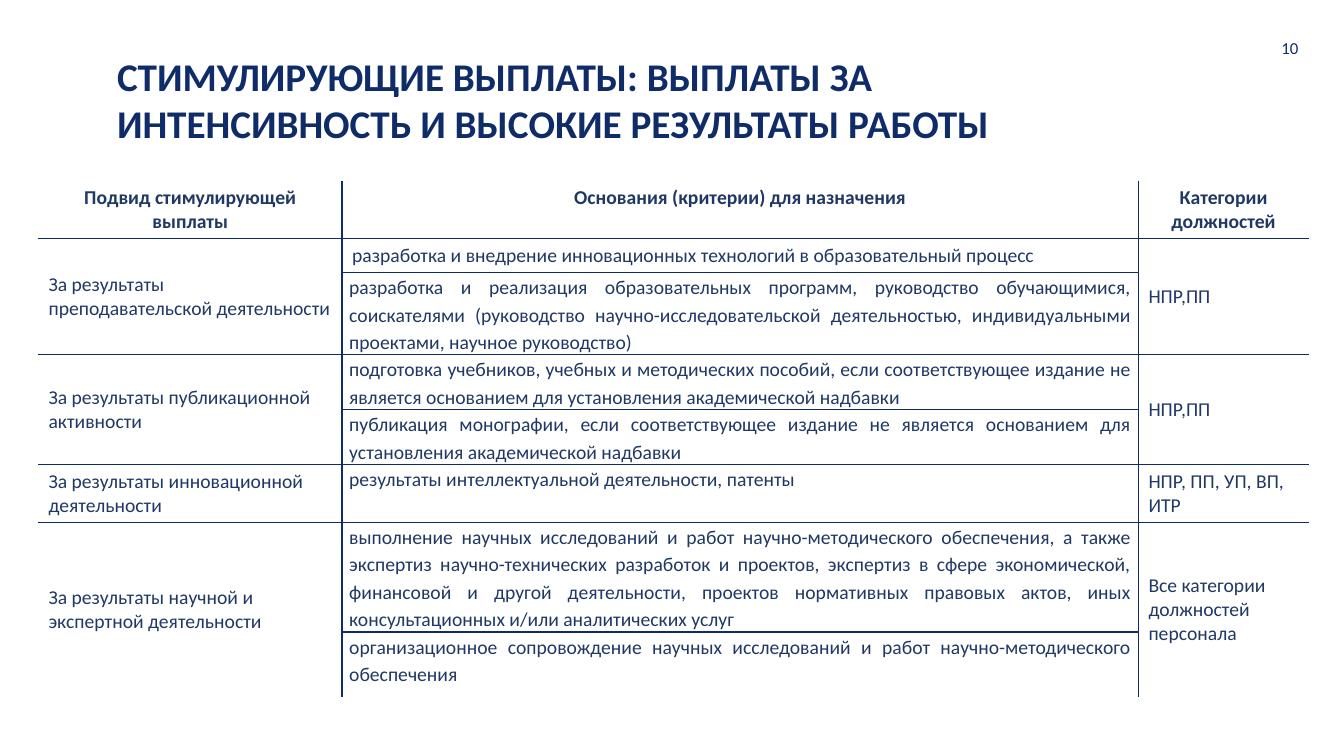
from dataclasses import dataclass

from lxml import etree
from pptx import Presentation
from pptx.dml.color import RGBColor
from pptx.enum.text import MSO_ANCHOR, PP_ALIGN
from pptx.oxml.ns import qn
from pptx.slide import Slide
from pptx.table import Table, _Cell
from pptx.util import Cm, Pt

LEFT, CENTER, RIGHT, JUSTIFY = PP_ALIGN.LEFT, PP_ALIGN.CENTER, PP_ALIGN.RIGHT, PP_ALIGN.JUSTIFY
TOP, MIDDLE = MSO_ANCHOR.TOP, MSO_ANCHOR.MIDDLE


@dataclass(frozen=True)
class Theme:
    font: str = "Calibri"
    navy: str = "0F2C68"
    body: str = "203864"
    title_size: int = 28
    table_size: int = 14
    number_size: int = 12
    line_width: int = 1


@dataclass(frozen=True)
class Payment:
    kind: str
    criteria: tuple[str, ...]
    staff: str


@dataclass(frozen=True)
class Label:
    text: str
    left: float
    top: float
    width: float
    height: float
    size: int
    bold: bool
    align: PP_ALIGN
    anchor: MSO_ANCHOR
    margin_x: float
    margin_y: float


THEME = Theme()
HEADERS = ("Подвид стимулирующей выплаты", "Основания (критерии) для назначения", "Категории должностей")
COLUMN_WIDTHS = (7.65, 20.07, 4.29)
ROW_HEIGHTS = (1.45, 0.84, 2.06, 1.37, 1.37, 1.45, 2.69, 1.63)
PAYMENTS = (
    Payment("За результаты преподавательской деятельности", (
        "разработка и внедрение инновационных технологий в образовательный процесс",
        "разработка и реализация образовательных программ, руководство обучающимися, "
        "соискателями (руководство научно-исследовательской деятельностью, "
        "индивидуальными проектами, научное руководство)",
    ), "НПР,ПП"),
    Payment("За результаты публикационной активности", (
        "подготовка учебников, учебных и методических пособий, если соответствующее "
        "издание не является основанием для установления академической надбавки",
        "публикация монографии, если соответствующее издание не является "
        "основанием для установления академической надбавки",
    ), "НПР,ПП"),
    Payment("За результаты инновационной деятельности", (
        "результаты интеллектуальной деятельности, патенты",
    ), "НПР, ПП, УП, ВП, ИТР"),
    Payment("За результаты научной и экспертной деятельности", (
        "выполнение научных исследований и работ научно-методического обеспечения, "
        "а также экспертиз научно-технических разработок и проектов, экспертиз в сфере "
        "экономической, финансовой и другой деятельности, проектов нормативных правовых "
        "актов, иных консультационных и/или аналитических услуг",
        "организационное сопровождение научных исследований и работ "
        "научно-методического обеспечения",
    ), "Все категории должностей персонала"),
)
LABELS = (
    Label("10", 31.14, 0.58, 1.83, 1.27, THEME.number_size, False, RIGHT, MIDDLE, 0.25, 0.13),
    Label("СТИМУЛИРУЮЩИЕ ВЫПЛАТЫ: ВЫПЛАТЫ ЗА ИНТЕНСИВНОСТЬ И ВЫСОКИЕ РЕЗУЛЬТАТЫ РАБОТЫ",
          2.87, 1.24, 22.58, 1.17, THEME.title_size, True, LEFT, TOP, 0.08, 0.08),
)


def style_paragraph(p, size: int, color: str, bold: bool, align: PP_ALIGN) -> None:
    p.alignment = align
    p.font.name = THEME.font
    p.font.size = Pt(size)
    p.font.bold = bold
    p.font.color.rgb = RGBColor.from_string(color)


def add_label(s: Slide, label: Label) -> None:
    sp = s.shapes.add_textbox(Cm(label.left), Cm(label.top), Cm(label.width), Cm(label.height))
    tf = sp.text_frame
    tf.word_wrap = True
    tf.vertical_anchor = label.anchor
    tf.margin_left = tf.margin_right = Cm(label.margin_x)
    tf.margin_top = tf.margin_bottom = Cm(label.margin_y)
    p = tf.paragraphs[0]
    p.text = label.text
    style_paragraph(p, label.size, THEME.navy, label.bold, label.align)


def fill_cell(cell: _Cell, text: str, align: PP_ALIGN, anchor: MSO_ANCHOR, bold: bool = False) -> None:
    cell.vertical_anchor = anchor
    p = cell.text_frame.paragraphs[0]
    p.text = text
    style_paragraph(p, THEME.table_size, THEME.body, bold, align)


def set_borders(cell: _Cell, edges: dict[str, bool]) -> None:
    tc_pr = cell._tc.get_or_add_tcPr()
    for tag, visible in edges.items():
        ln = etree.SubElement(tc_pr, qn(tag), w=str(Pt(THEME.line_width)))
        if visible:
            fill = etree.SubElement(ln, qn("a:solidFill"))
            etree.SubElement(fill, qn("a:srgbClr"), val=THEME.navy)
        else:
            etree.SubElement(ln, qn("a:noFill"))


def draw_grid(table: Table) -> None:
    last_row, last_column = len(ROW_HEIGHTS) - 1, len(COLUMN_WIDTHS) - 1
    for row in range(last_row + 1):
        for column in range(last_column + 1):
            cell = table.cell(row, column)
            bottom_row = row + (cell.span_height - 1 if cell.is_merge_origin else 0)
            set_borders(cell, {
                "a:lnL": column > 0,
                "a:lnR": column < last_column,
                "a:lnT": row > 0 and not cell.is_spanned,
                "a:lnB": bottom_row < last_row,
            })
            cell.fill.background()


def add_payments_table(s: Slide) -> None:
    frame = s.shapes.add_table(len(ROW_HEIGHTS), len(COLUMN_WIDTHS), Cm(0.97), Cm(4.55),
                               Cm(sum(COLUMN_WIDTHS)), Cm(sum(ROW_HEIGHTS)))
    table = frame.table
    table.first_row = table.horz_banding = False
    for column, width in zip(table.columns, COLUMN_WIDTHS):
        column.width = Cm(width)
    for table_row, height in zip(table.rows, ROW_HEIGHTS):
        table_row.height = Cm(height)
    for column, header in enumerate(HEADERS):
        fill_cell(table.cell(0, column), header, CENTER, TOP, bold=True)

    row = 1
    for payment in PAYMENTS:
        end = row + len(payment.criteria) - 1
        for column, text in ((0, payment.kind), (2, payment.staff)):
            cell = table.cell(row, column)
            if end > row:
                cell.merge(table.cell(end, column))
            fill_cell(cell, text, LEFT, MIDDLE)
        for offset, criterion in enumerate(payment.criteria):
            cell = table.cell(row + offset, 1)
            fill_cell(cell, criterion, JUSTIFY, TOP)
            if row + offset > 1:
                cell.margin_left = cell.margin_right = Cm(0.18)
                cell.margin_top = cell.margin_bottom = Cm(0)
                cell.text_frame.paragraphs[0].line_spacing = 1.15
        row = end + 1
    draw_grid(table)


def main() -> None:
    prs = Presentation()
    prs.slide_width, prs.slide_height = Cm(33.87), Cm(19.05)
    s = prs.slides.add_slide(prs.slide_layouts[6])
    add_payments_table(s)
    for label in LABELS:
        add_label(s, label)
    prs.save("out.pptx")


if __name__ == "__main__":
    main()
